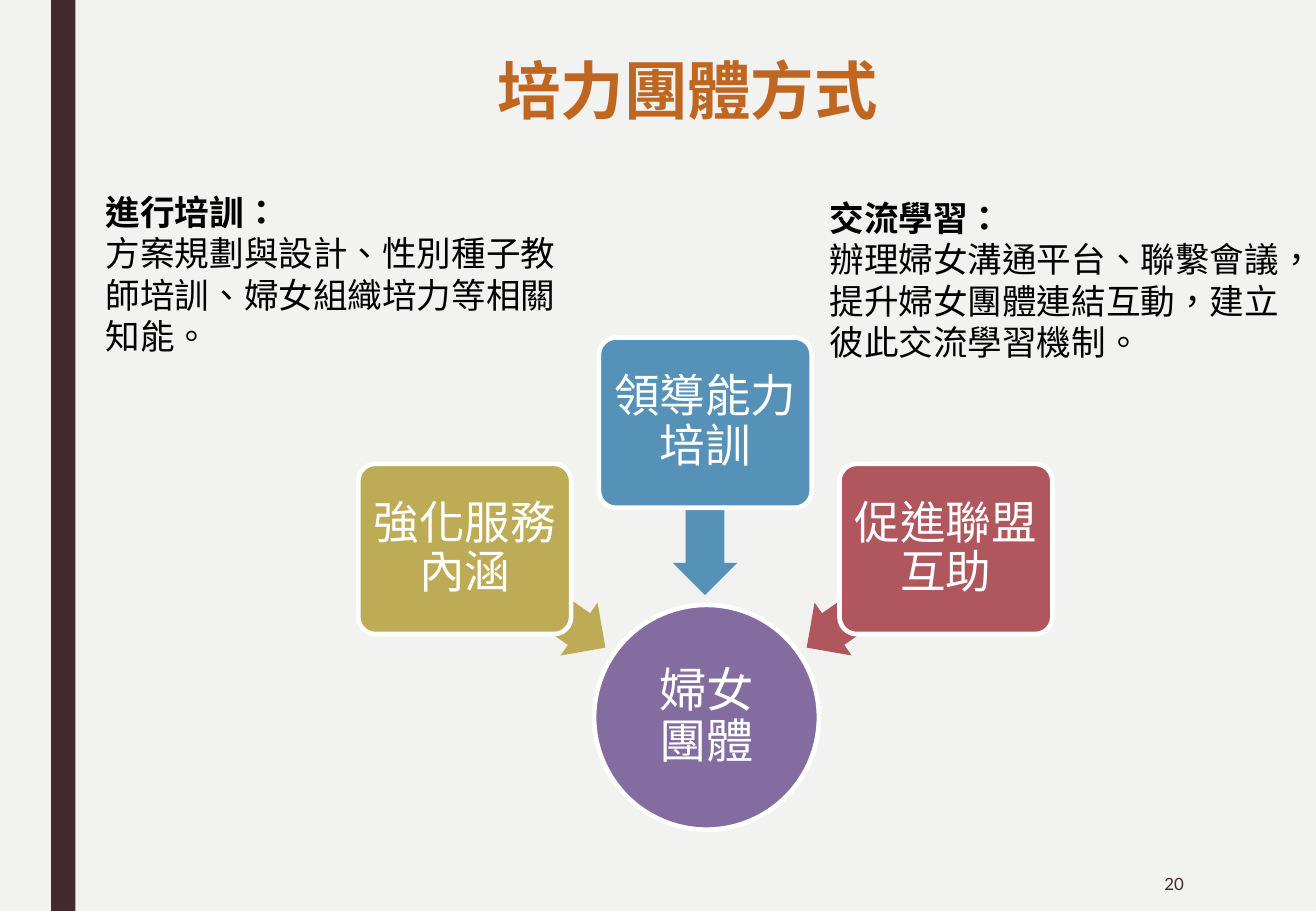
"""Build the slide on ways to empower women's groups."""
from pptx import Presentation
from pptx import util as u
from pptx.dml import color
from pptx.enum import shapes, text


def paint(fill, tint):
    fill.solid()
    fill.fore_color.rgb = color.RGBColor.from_string(tint)


def write(shape, words, size, tint, align, anchor="TOP", face="Lato", pad=None, lead=None):
    frame = shape.text_frame
    frame.text = words
    frame.word_wrap = True
    frame.auto_size = text.MSO_AUTO_SIZE.NONE
    frame.vertical_anchor = text.MSO_ANCHOR[anchor]
    if pad is not None:
        frame.margin_left = frame.margin_right = u.Cm(pad)
        frame.margin_top = frame.margin_bottom = u.Cm(pad)
    for para in frame.paragraphs:
        para.alignment = text.PP_ALIGN[align]
        para.line_spacing = lead
        for run in para.runs:
            run.font.size = u.Pt(size)
            run.font.name = face
            run.font.bold = False
            run.font._element.set("lang", "zh-TW")
            paint(run.font.fill, tint)
    return frame.paragraphs[0].runs[0].font


deck = Presentation()
deck.slide_width, deck.slide_height = u.Cm(27.51), u.Cm(19.05)
slide = deck.slides.add_slide(deck.slide_layouts[5])
paint(slide.background.fill, "F2F2F0")

title = slide.shapes.title
title.left, title.top = u.Cm(9.17), u.Cm(0.94)
title.width, title.height = u.Cm(10.41), u.Cm(1.85)
write(title, "培力團體方式", 37.6, "BF6621", "CENTER").bold = True

kind = shapes.MSO_SHAPE
parts = [
    (kind.RECTANGLE, (1.07, 0, 0.51, 19.05), "432A30", 0, ""),
    (kind.OVAL, (12.42, 12.65, 4.7, 4.7), "836C9F", 0, "婦女\n團體"),
]
cards = [
    ("強化服務內涵", "BDAB56", 9.7, 9.4, 11.84, 215),
    ("領導能力培訓", "5692B7", 7.06, 12.95, 9.98, 270),
    ("促進聯盟互助", "B0565D", 9.7, 16.54, 11.84, 325),
]
for col, (words, tint, top, left, low, turn) in enumerate(cards):
    parts.append((kind.LEFT_ARROW, (left, low, 3.58, 1.35), tint, turn, ""))
    box = (7.49 + 5.03 * col, top, 4.45, 3.56)
    parts.append((kind.ROUNDED_RECTANGLE, box, tint, 0, words))

for form, box, tint, turn, words in parts:
    shape = slide.shapes.add_shape(form, *map(u.Cm, box))
    shape.shadow.inherit = False
    shape.rotation = turn
    paint(shape.fill, tint)
    if form == kind.LEFT_ARROW:
        shape.adjustments[0], shape.adjustments[1] = 0.6, 0.5
    if form == kind.ROUNDED_RECTANGLE:
        shape.adjustments[0] = 0.1
    if words:
        paint(shape.line.fill, "FFFFFF")
        shape.line.width = u.Pt(2.75)
        size, pad = (28, 0.05) if form == kind.OVAL else (27, 0.15)
        write(shape, words, size, "FFFFFF", "CENTER", "MIDDLE", pad=pad, lead=0.9)
    else:
        shape.line.fill.background()

notes = [
    (1.96, 3.86, "進行培訓：\n方案規劃與設計、性別種子教師培訓、婦女組織培力等相關知能。"),
    (17.09, 3.99, "交流學習：\n辦理婦女溝通平台、聯繫會議，提升婦女團體連結互動，建立彼此交流學習機制。"),
]
for left, top, words in notes:
    box = slide.shapes.add_textbox(u.Cm(left), u.Cm(top), u.Cm(10.05), u.Cm(3.76))
    write(box, words, 20.5, "000000", "LEFT", face="Noto Sans CJK SC").bold = True

page = slide.shapes.add_textbox(u.Cm(21.39), u.Cm(17.93), u.Cm(3.61), u.Cm(1.12))
write(page, "20", 10, "432A30", "RIGHT", "MIDDLE")

deck.save("out.pptx")
